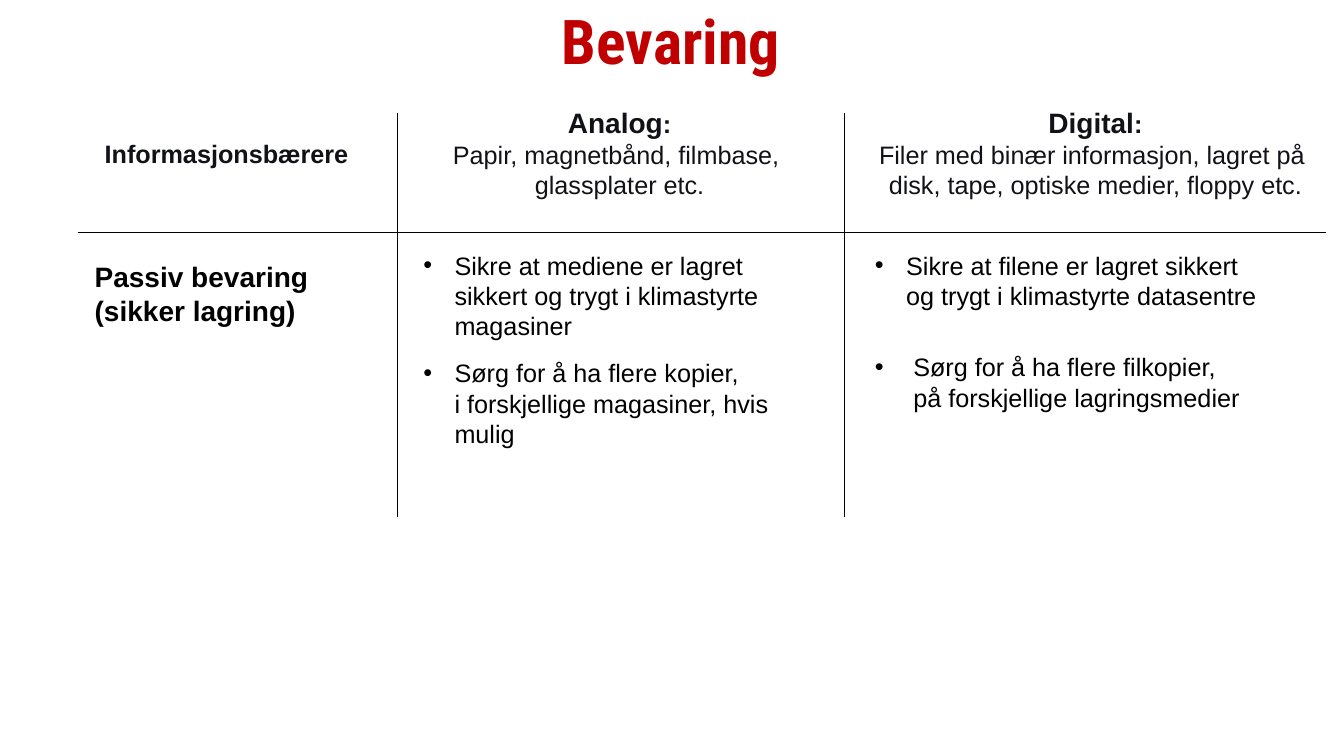
from lxml import etree
from pptx import Presentation
from pptx.dml.color import RGBColor
from pptx.enum.shapes import MSO_CONNECTOR
from pptx.enum.text import MSO_ANCHOR, PP_ALIGN
from pptx.oxml.ns import qn
from pptx.util import Inches, Pt

RED = RGBColor(0xC0, 0x00, 0x00)
INK = RGBColor(0x11, 0x12, 0x17)
BLACK = RGBColor(0x00, 0x00, 0x00)
CENTER, LEFT = PP_ALIGN.CENTER, PP_ALIGN.LEFT
BOTTOM = MSO_ANCHOR.BOTTOM
STRAIGHT = MSO_CONNECTOR.STRAIGHT

HEAD = {"size": Pt(20), "name": "Arial", "bold": True}
LABEL = {"size": Pt(18), "name": "Arial", "bold": True}
BODY = {"size": Pt(18), "name": "Arial", "bold": False}
TITLE = {"size": Pt(44.1), "name": "Roboto Condensed", "bold": True}
SPACE = {"size": Pt(16.2), "name": "Roboto Condensed", "bold": False}


def add_box(slide, box):
    """Add a wrapping text box and return its frame."""
    frame = slide.shapes.add_textbox(*map(Inches, box)).text_frame
    frame.word_wrap = True
    return frame


def add_runs(para, runs, align=LEFT):
    """Fill a paragraph with runs, turning newlines into line breaks."""
    para.alignment = align
    for text, style, color in runs:
        for pos, part in enumerate(text.split("\n")):
            if pos:
                para.add_line_break()
            if part:
                run = para.add_run()
                run.text = part
                for key, value in style.items():
                    setattr(run.font, key, value)
                run.font.color.rgb = color
    for brk in para._p.findall(qn("a:br")):
        props = etree.SubElement(brk, qn("a:rPr"))
        props.set("sz", str(runs[-1][1]["size"].centipoints))


def add_title(slide, box, text):
    """Place the slide heading at the bottom of its box."""
    frame = add_box(slide, box)
    frame.margin_left = 0
    frame.vertical_anchor = BOTTOM
    para = frame.paragraphs[0]
    para.line_spacing = 0.9
    add_runs(para, [(text, TITLE, RED), (" ", SPACE, BLACK)], CENTER)


def add_label(slide, box, text, style, color):
    """Place a bold row label."""
    add_runs(add_box(slide, box).paragraphs[0], [(text, style, color)])


def add_head(slide, box, name, lines):
    """Place a column heading with centred lines of examples."""
    frame = add_box(slide, box)
    add_runs(frame.paragraphs[0], [(name, HEAD, INK), (":", LABEL, INK)], CENTER)
    for line in lines:
        add_runs(frame.add_paragraph(), [(line, BODY, INK)], CENTER)


def add_point(slide, box, text, indent):
    """Place one bulleted point with a hanging indent."""
    para = add_box(slide, box).paragraphs[0]
    props = para._p.get_or_add_pPr()
    props.set("marL", str(Inches(indent)))
    props.set("indent", str(-Inches(indent)))
    etree.SubElement(props, qn("a:buFont")).set("typeface", "Arial")
    etree.SubElement(props, qn("a:buChar")).set("char", "•")
    add_runs(para, [(text, BODY, BLACK)])


def add_rules(slide, box, cols, row):
    """Draw the column rules and the row rule across a box."""
    left, top, width, height = box
    ends = [(col, top, col, top + height) for col in cols]
    ends.append((left, row, left + width, row))
    for end in ends:
        rule = slide.shapes.add_connector(STRAIGHT, *map(Inches, end))
        rule.line.color.rgb = BLACK
        rule.line.width = Pt(0.5)
        etree.SubElement(rule._element.spPr, qn("a:effectLst"))


def main():
    """Build the slide on preservation and save it."""
    deck = Presentation()
    deck.slide_width, deck.slide_height = Inches(13.33), Inches(7.5)
    slide = deck.slides.add_slide(deck.slide_layouts[6])
    add_title(slide, (0.69, 0.13, 12.08, 0.69), "Bevaring")
    add_rules(slide, (0.77, 1.12, 12.38, 4.01), (3.94, 8.37), 2.31)
    add_label(slide, (0.94, 1.32, 2.76, 0.4), "Informasjonsbærere", LABEL, INK)
    add_label(slide, (0.84, 2.53, 2.95, 0.77),
              "Passiv bevaring (sikker lagring)", HEAD, BLACK)
    add_head(slide, (4.35, 1, 3.59, 1.04), "Analog",
             ["Papir, magnetbånd, filmbase, ", "glassplater etc."])
    add_head(slide, (8.58, 1, 4.57, 1.04), "Digital",
             ["Filer med binær informasjon, lagret på \n"
              "disk, tape, optiske medier, floppy etc."])
    points = [
        ((4.1, 2.43, 3.66, 1.01), 0.31,
         "Sikre at mediene er lagret sikkert og trygt i klimastyrte magasiner"),
        ((4.1, 3.5, 3.67, 1.31), 0.31,
         "Sørg for å ha flere kopier, \ni forskjellige magasiner, hvis mulig"),
        ((8.58, 2.43, 4.14, 0.71), 0.31,
         "Sikre at filene er lagret sikkert og trygt i klimastyrte datasentre"),
        ((8.58, 3.44, 4, 0.71), 0.38,
         "Sørg for å ha flere filkopier, \npå forskjellige lagringsmedier"),
    ]
    for box, indent, text in points:
        add_point(slide, box, text, indent)
    deck.save("out.pptx")


if __name__ == "__main__":
    main()
